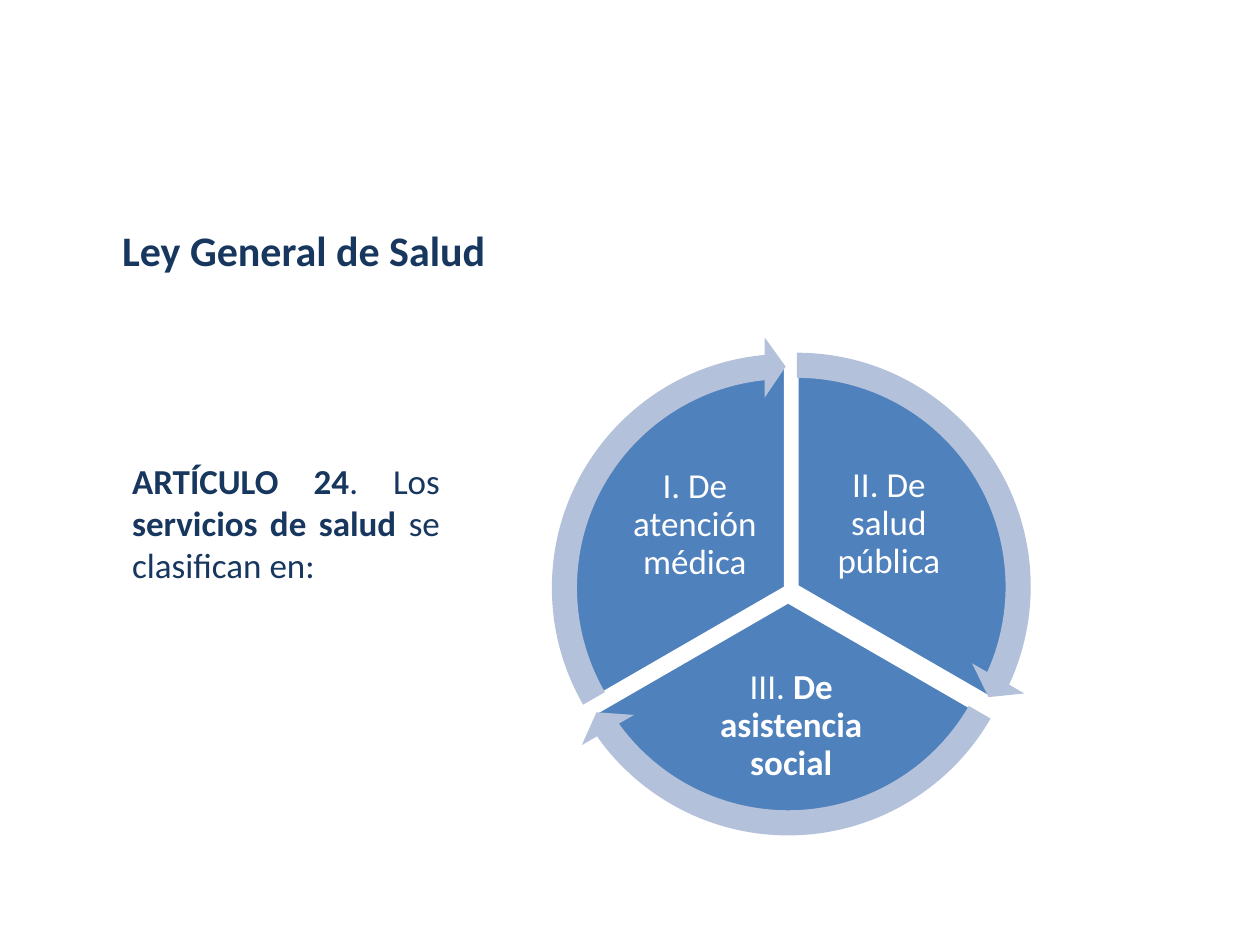
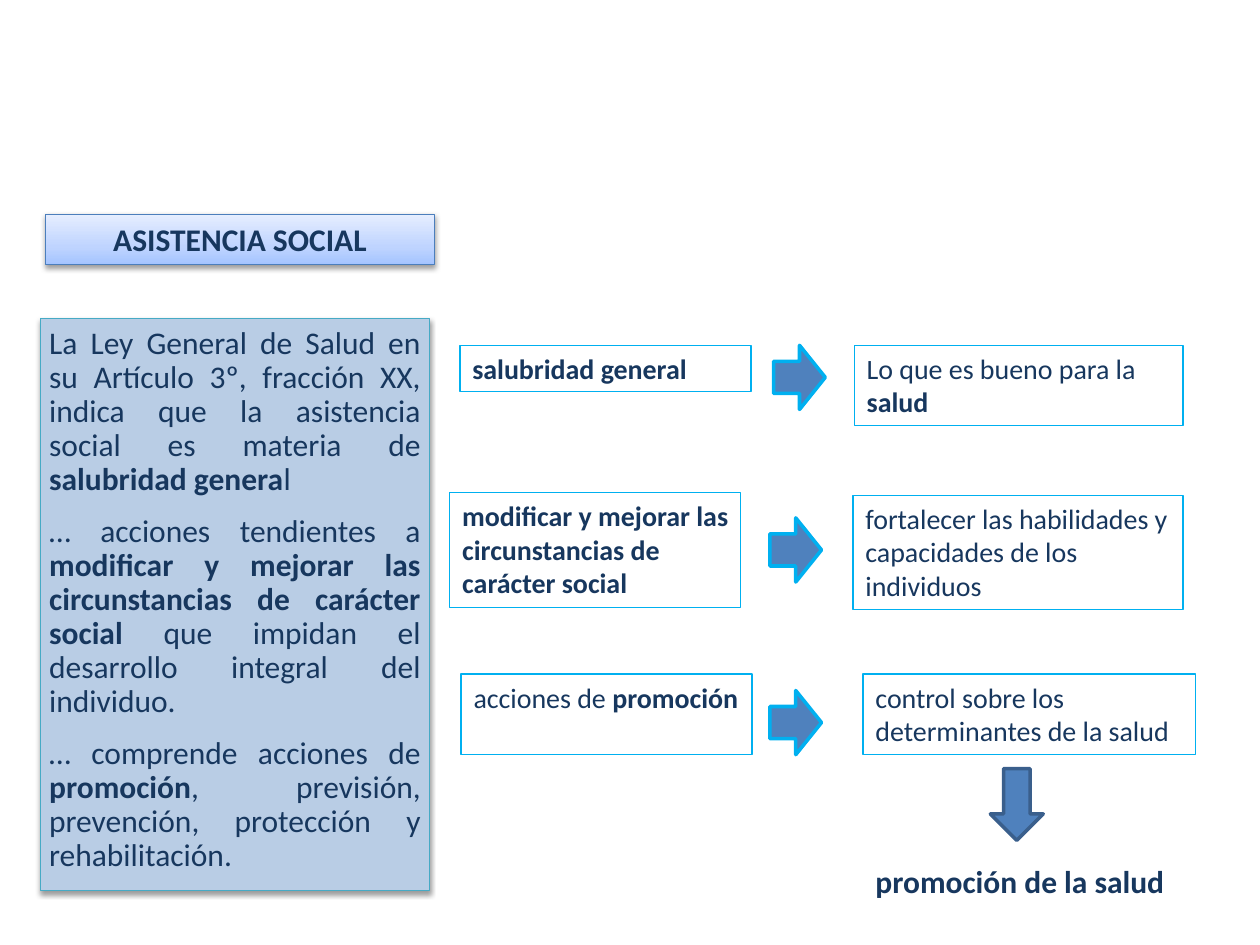
from dataclasses import dataclass
from typing import Optional

import lxml.etree
import pptx
import pptx.dml.color
import pptx.enum.shapes
import pptx.enum.text
import pptx.oxml.ns
import pptx.util

Inches = pptx.util.Inches
RGBColor = pptx.dml.color.RGBColor
Shapes = pptx.enum.shapes.MSO_SHAPE
Align = pptx.enum.text.PP_ALIGN
Anchor = pptx.enum.text.MSO_ANCHOR
qn = pptx.oxml.ns.qn

FONT = "Calibri"
NAVY = RGBColor(0x17, 0x37, 0x5E)
WHITE = RGBColor(0xFF, 0xFF, 0xFF)
BLUE = RGBColor(0x4F, 0x81, 0xBD)
DARK_BLUE = RGBColor(0x3A, 0x5F, 0x8C)
RING_BLUE = RGBColor(0xB3, 0xC1, 0xDB)
PALE_BLUE = RGBColor(0xB9, 0xCD, 0xE5)
CYAN = RGBColor(0x00, 0xB0, 0xF0)
TEAL = RGBColor(0x46, 0xAA, 0xC5)
HEADING_LINE = RGBColor(0x4B, 0x7E, 0xBC)
HEADING_STOPS = ((0, RGBColor(0xA4, 0xC4, 0xFF)),
                 (35, RGBColor(0xBF, 0xD4, 0xFF)),
                 (100, RGBColor(0xE6, 0xEE, 0xFF)))


@dataclass(frozen=True)
class Area:
    left: float
    top: float
    width: float
    height: float

    def lengths(self) -> tuple:
        return tuple(Inches(v) for v in (self.left, self.top, self.width, self.height))


@dataclass(frozen=True)
class Span:
    text: str
    bold: bool = False


@dataclass(frozen=True)
class TextStyle:
    size: float
    color: RGBColor = NAVY
    align: Align = Align.LEFT
    anchor: Anchor = Anchor.TOP
    line_spacing: float = 1.0
    space_before: float = 0
    inset: tuple = (0.1, 0.05)


@dataclass(frozen=True)
class Sector:
    start: float
    end: float
    pie: Area
    arrow: Area
    arrow_start: float
    arrow_end: float
    label: Area
    spans: tuple


@dataclass(frozen=True)
class Step:
    cause: Area
    cause_spans: tuple
    arrow: Area
    effect: Area
    effect_spans: tuple


HEADING = TextStyle(24, inset=(0.07, 0.04))
ARTICLE = TextStyle(20, align=Align.JUSTIFY)
SECTOR_LABEL = TextStyle(20, WHITE, Align.CENTER, Anchor.MIDDLE, 0.9, inset=(0.03, 0.03))
BANNER = TextStyle(18, align=Align.CENTER)
SUMMARY = TextStyle(18, align=Align.JUSTIFY, line_spacing=0.9, space_before=10,
                    inset=(0.07, 0.07))
STEP_TEXT = TextStyle(16)
CONCLUSION = TextStyle(18)

PIE_SIZE, RING_SIZE = 3.55, 3.99
SECTORS = (
    Sector(270, 30, Area(4.55, 2.88, PIE_SIZE, PIE_SIZE),
           Area(4.33, 2.66, RING_SIZE, RING_SIZE), 269.99, 24.54,
           Area(6.42, 3.63, 1.27, 1.06), (Span("II. De salud pública"),)),
    Sector(30, 150, Area(4.48, 3, PIE_SIZE, PIE_SIZE),
           Area(4.26, 2.78, RING_SIZE, RING_SIZE), 30.01, 144.53,
           Area(5.33, 5.3, 1.9, 0.93), (Span("III. "), Span("De asistencia social", True))),
    Sector(150, 270, Area(4.46, 2.89, PIE_SIZE, PIE_SIZE),
           Area(4.24, 2.67, RING_SIZE, RING_SIZE), 150, 264.55,
           Area(4.88, 3.64, 1.27, 1.06), (Span("I. De atención médica"),)),
)

STEPS = (
    Step(Area(3.65, 2.74, 2.31, 0.37), (Span("salubridad general", True),),
         Area(6.09, 2.79, 0.51, 0.41), Area(6.78, 2.74, 2.61, 0.64),
         (Span("Lo que es bueno para la "), Span("salud", True))),
    Step(Area(3.57, 3.91, 2.31, 0.91),
         (Span("modificar y mejorar las circunstancias de carácter social", True),),
         Area(6.06, 4.16, 0.51, 0.41), Area(6.77, 3.93, 2.62, 0.91),
         (Span("fortalecer las habilidades y capacidades de los individuos"),)),
    Step(Area(3.66, 5.35, 2.31, 0.64), (Span("acciones de "), Span("promoción", True)),
         Area(6.06, 5.53, 0.51, 0.41), Area(6.85, 5.35, 2.64, 0.64),
         (Span("control sobre los determinantes de la salud"),)),
)

SUMMARY_PARAGRAPHS = (
    (Span("La Ley General de Salud en su Artículo 3º, fracción XX, indica que la "
          "asistencia social es materia de "),
     Span("salubridad genera", True), Span("l")),
    (Span("… acciones tendientes a "),
     Span("modificar y mejorar las circunstancias de carácter social", True),
     Span(" que impidan el desarrollo integral del individuo.")),
    (Span("… comprende acciones de "), Span("promoción", True),
     Span(", previsión, prevención, protección y rehabilitación.")),
)


def write(shape, paragraphs: tuple, style: TextStyle) -> None:
    """Fill a shape with paragraphs, each a tuple of spans."""
    frame = shape.text_frame
    frame.word_wrap = True
    frame.vertical_anchor = style.anchor
    frame.margin_left = frame.margin_right = Inches(style.inset[0])
    frame.margin_top = frame.margin_bottom = Inches(style.inset[1])
    for index, spans in enumerate(paragraphs):
        para = frame.add_paragraph() if index else frame.paragraphs[0]
        para.alignment = style.align
        para.line_spacing = style.line_spacing
        if index:
            para.space_before = pptx.util.Pt(style.space_before)
        for span in spans:
            run = para.add_run()
            run.text = span.text
            run.font.name = FONT
            run.font.size = pptx.util.Pt(style.size)
            run.font.bold = span.bold
            run.font.color.rgb = style.color


def add_text(page, area: Area, spans: tuple, style: TextStyle) -> None:
    write(page.shapes.add_textbox(*area.lengths()), (spans,), style)


def add_figure(page, kind: Shapes, area: Area, fill: Optional[RGBColor] = None,
               line: Optional[RGBColor] = None, weight: float = 0.75):
    """Add a flat preset shape; a missing colour means no fill or no line."""
    shape = page.shapes.add_shape(kind, *area.lengths())
    shape.shadow.inherit = False
    for paint, color in ((shape.fill, fill), (shape.line.fill, line)):
        if color is None:
            paint.background()
        else:
            paint.solid()
            paint.fore_color.rgb = color
    if line is not None:
        shape.line.width = pptx.util.Pt(weight)
    return shape


def set_angles(shape, values: tuple) -> None:
    for index, value in enumerate(values):
        shape.adjustments[index] = value


def angle(degrees: float) -> float:
    """Turn degrees into the scale of shape adjustments."""
    return degrees * 0.6


def add_color(parent, color: RGBColor):
    return lxml.etree.SubElement(parent, qn("a:srgbClr"), val=str(color))


def add_shadow(shape) -> None:
    effects = shape._element.spPr.find(qn("a:effectLst"))
    shadow = lxml.etree.SubElement(
        effects, qn("a:outerShdw"), blurRad=str(pptx.util.Pt(3.1)),
        dist=str(pptx.util.Pt(1.6)), dir="5400000", rotWithShape="0")
    color = add_color(shadow, RGBColor(0, 0, 0))
    lxml.etree.SubElement(color, qn("a:alpha"), val="38000")


def set_gradient(shape, stops: tuple) -> None:
    shape.fill.gradient()
    shape.fill.gradient_angle = 90
    stop_list = shape._element.spPr.find(qn("a:gradFill")).find(qn("a:gsLst"))
    for stop in list(stop_list):
        stop_list.remove(stop)
    for position, color in stops:
        add_color(lxml.etree.SubElement(stop_list, qn("a:gs"), pos=str(position * 1000)), color)


def add_framed_text(page, area: Area, spans: tuple) -> None:
    write(add_figure(page, Shapes.RECTANGLE, area, line=CYAN), (spans,), STEP_TEXT)


def build_services(page) -> None:
    # Sectors of the wheel, then the ring of arrows over them
    for sector in SECTORS:
        pie = add_figure(page, Shapes.PIE, sector.pie, BLUE, WHITE, 2)
        set_angles(pie, (angle(sector.start), angle(sector.end)))
        add_text(page, sector.label, sector.spans, SECTOR_LABEL)
    for sector in SECTORS:
        arrow = add_figure(page, Shapes.CIRCULAR_ARROW, sector.arrow, RING_BLUE)
        set_angles(arrow, (0.05, angle(5.46), angle(sector.arrow_end),
                           angle(sector.arrow_start), 0.06))
    # Heading and article
    add_text(page, Area(0.9, 1.74, 3.4, 0.43), (Span("Ley General de Salud", True),), HEADING)
    add_text(page, Area(0.95, 3.6, 2.64, 1.11),
             (Span("ARTÍCULO 24", True), Span(". Los "),
              Span("servicios de salud ", True), Span("se clasifican en:")), ARTICLE)


def build_assistance(page) -> None:
    # Summary panel and its banner
    panel = add_figure(page, Shapes.RECTANGLE, Area(0.32, 2.53, 3.09, 4.54), PALE_BLUE, TEAL)
    add_shadow(panel)
    write(panel, SUMMARY_PARAGRAPHS, SUMMARY)
    banner = add_figure(page, Shapes.RECTANGLE, Area(0.36, 1.7, 3.09, 0.4), line=HEADING_LINE)
    set_gradient(banner, HEADING_STOPS)
    add_shadow(banner)
    write(banner, ((Span("ASISTENCIA SOCIAL", True),),), BANNER)
    # Steps from cause to effect
    for step in STEPS:
        add_framed_text(page, step.cause, step.cause_spans)
        arrow = add_figure(page, Shapes.UP_ARROW, step.arrow, BLUE, CYAN, 2)
        arrow.rotation = 90
        add_framed_text(page, step.effect, step.effect_spans)
    # Conclusion
    add_figure(page, Shapes.DOWN_ARROW, Area(7.86, 6.1, 0.42, 0.57), BLUE, DARK_BLUE, 2)
    add_text(page, Area(6.85, 6.79, 2.63, 0.4), (Span("promoción de la salud", True),),
             CONCLUSION)


def main() -> None:
    deck = pptx.Presentation()
    deck.slide_width, deck.slide_height = Inches(10), Inches(7.5)
    for build in (build_services, build_assistance):
        build(deck.slides.add_slide(deck.slide_layouts[6]))
    deck.save("out.pptx")


if __name__ == "__main__":
    main()
